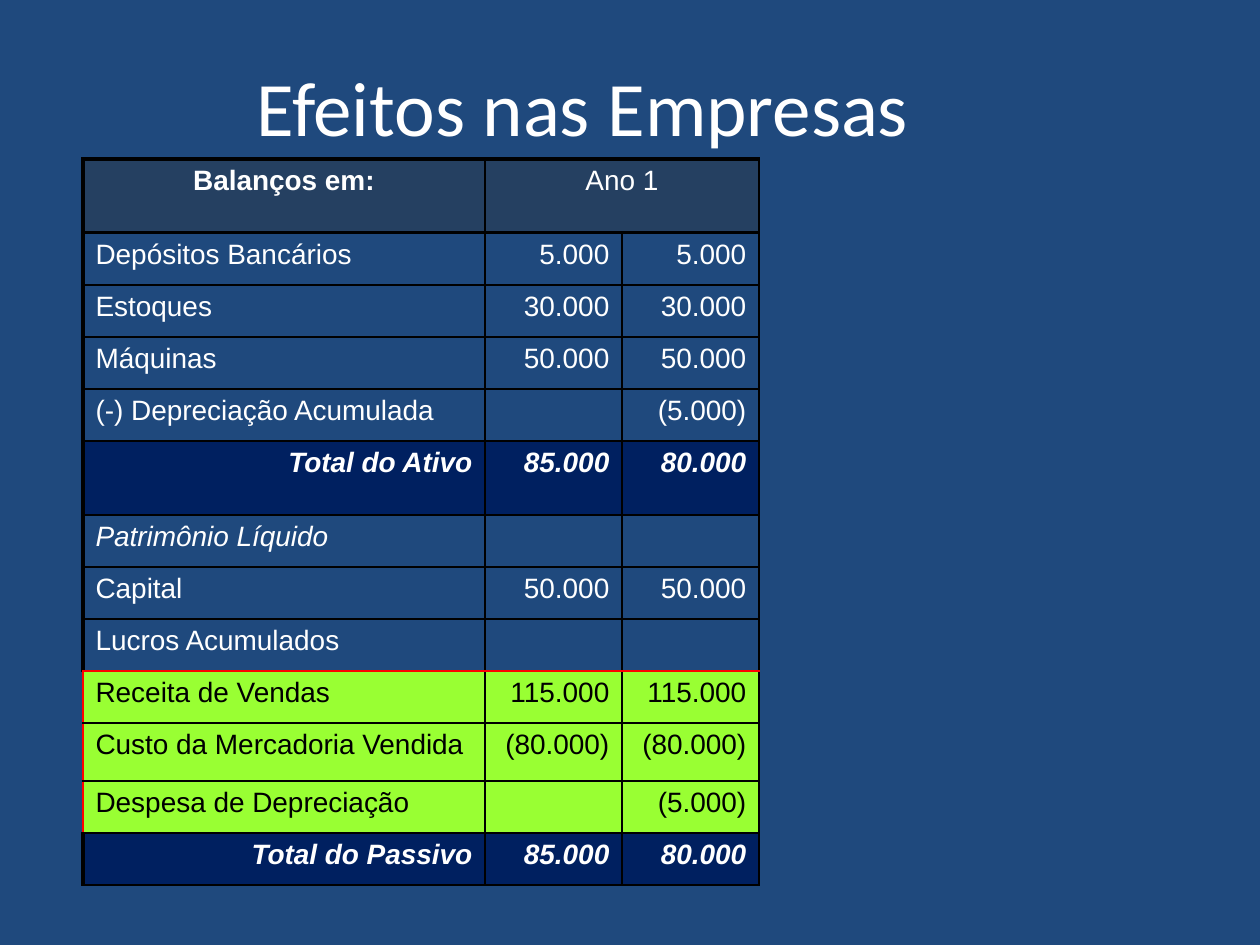
from dataclasses import dataclass

from lxml.etree import SubElement
from pptx import Presentation
from pptx.dml.color import RGBColor
from pptx.enum.text import MSO_ANCHOR, PP_ALIGN
from pptx.oxml.ns import qn
from pptx.util import Emu, Pt

WHITE = RGBColor(0xFF, 0xFF, 0xFF)
BLACK = RGBColor(0, 0, 0)
RED = RGBColor(0xFF, 0, 0)
BLUE = RGBColor(0x1F, 0x49, 0x7D)
SLATE = RGBColor(0x25, 0x40, 0x61)
NAVY = RGBColor(0, 0x20, 0x60)
GREEN = RGBColor(0x99, 0xFF, 0x33)

EMU_PER_PX = 914400 / 126
COLUMN_WIDTHS = (402, 137, 137)
HANGING = 48


@dataclass
class RowStyle:
    """Look of one kind of balance sheet row."""

    fill: RGBColor = None
    color: RGBColor = WHITE
    label_align: PP_ALIGN = PP_ALIGN.JUSTIFY
    value_align: PP_ALIGN = PP_ALIGN.RIGHT
    label_bold: bool = False
    value_bold: bool = False
    italic: bool = False


HEADER = RowStyle(SLATE, label_align=PP_ALIGN.CENTER, value_align=PP_ALIGN.CENTER, label_bold=True)
ACCOUNT = RowStyle()
SECTION = RowStyle(label_align=PP_ALIGN.LEFT, italic=True)
RESULT = RowStyle(GREEN, BLACK)
TOTAL = RowStyle(NAVY, label_align=PP_ALIGN.RIGHT, label_bold=True, value_bold=True, italic=True)

ROWS = (
    (HEADER, 74, "Balanços em:", "Ano 1", ""),
    (ACCOUNT, 52, "Depósitos Bancários", "5.000", "5.000"),
    (ACCOUNT, 52, "Estoques", "30.000", "30.000"),
    (ACCOUNT, 52, "Máquinas", "50.000", "50.000"),
    (ACCOUNT, 52, "(-) Depreciação Acumulada", "", "(5.000)"),
    (TOTAL, 74, "Total do Ativo", "85.000", "80.000"),
    (SECTION, 52, "Patrimônio Líquido", "", ""),
    (ACCOUNT, 52, "Capital", "50.000", "50.000"),
    (ACCOUNT, 52, "Lucros Acumulados", "", ""),
    (RESULT, 52, "Receita de Vendas", "115.000", "115.000"),
    (RESULT, 58, "Custo da Mercadoria Vendida", "(80.000)", "(80.000)"),
    (RESULT, 52, "Despesa de Depreciação", "", "(5.000)"),
    (TOTAL, 52, "Total do Passivo", "85.000", "80.000"),
)
FIRST_RESULT = [row[0] for row in ROWS].index(RESULT)


def px(length):
    """Turn a length in pixels into EMU."""
    return Emu(round(length * EMU_PER_PX))


def write(frame, text, *, size, font, color, align, bold=False, italic=False, hanging=0):
    """Write one formatted paragraph into a text frame."""
    para = frame.paragraphs[0]
    para.alignment = align
    if hanging:
        properties = para._p.get_or_add_pPr()
        properties.set("marL", str(px(hanging)))
        properties.set("indent", str(-px(hanging)))
    span = para.add_run()
    span.text = text
    span.font.size = Pt(size)
    span.font.name = font
    span.font.color.rgb = color
    span.font.bold = bold
    span.font.italic = italic


def add_border(cell, side, color, width):
    """Draw a solid line along one side of a cell."""
    properties = cell._tc.get_or_add_tcPr()
    line = SubElement(properties, qn(f"a:ln{side}"), w=str(Pt(width)))
    fill = SubElement(line, qn("a:solidFill"))
    SubElement(fill, qn("a:srgbClr"), val=str(color))


def horizontal_edge(index):
    """Give colour and width of the line above the row at this index."""
    if index == FIRST_RESULT:
        return RED, 1
    return BLACK, 2 if index < 2 else 1


def left_edge(style, column):
    """Give colour and width of the line left of a cell."""
    if column:
        return BLACK, 1
    return (RED, 1) if style is RESULT else (BLACK, 2)


def format_cell(cell, style, row, column):
    """Set the borders and the fill of a table cell."""
    add_border(cell, "L", *left_edge(style, column))
    add_border(cell, "R", BLACK, 1)
    add_border(cell, "T", *horizontal_edge(row))
    add_border(cell, "B", *horizontal_edge(row + 1))
    if style.fill is None:
        cell.fill.background()
    else:
        cell.fill.solid()
        cell.fill.fore_color.rgb = style.fill


def add_title(page, text):
    """Fill and place the title placeholder."""
    title = page.shapes.title
    title.left, title.top, title.width, title.height = px(63), px(16), px(1040), px(179)
    title.text_frame.vertical_anchor = MSO_ANCHOR.MIDDLE
    write(title.text_frame, text, size=44, font="Calibri", color=WHITE, align=PP_ALIGN.CENTER)


def add_balance_table(page):
    """Add the balance sheet table."""
    height = sum(row[1] for row in ROWS)
    frame = page.shapes.add_table(len(ROWS), len(COLUMN_WIDTHS), px(83), px(159),
                                  px(sum(COLUMN_WIDTHS)), px(height))
    table = frame.table
    table.first_row = False
    table.horz_banding = False
    for column, width in zip(table.columns, COLUMN_WIDTHS):
        column.width = px(width)
    for row, (style, height, *texts) in enumerate(ROWS):
        table.rows[row].height = px(height)
        for column, text in enumerate(texts):
            cell = table.cell(row, column)
            format_cell(cell, style, row, column)
            if text:
                is_label = column == 0
                write(cell.text_frame, text, size=16, font="Arial", color=style.color,
                      align=style.label_align if is_label else style.value_align,
                      bold=style.label_bold if is_label else style.value_bold,
                      italic=style.italic,
                      hanging=HANGING if (is_label and style is not SECTION) or row < 2 else 0)
    table.cell(0, 1).merge(table.cell(0, 2))


def main():
    """Build the deck and save it."""
    deck = Presentation()
    deck.slide_width, deck.slide_height = px(1260), px(945)
    page = deck.slides.add_slide(deck.slide_layouts[5])
    page.background.fill.solid()
    page.background.fill.fore_color.rgb = BLUE
    add_title(page, "Efeitos nas Empresas")
    add_balance_table(page)
    deck.save("out.pptx")


if __name__ == "__main__":
    main()
